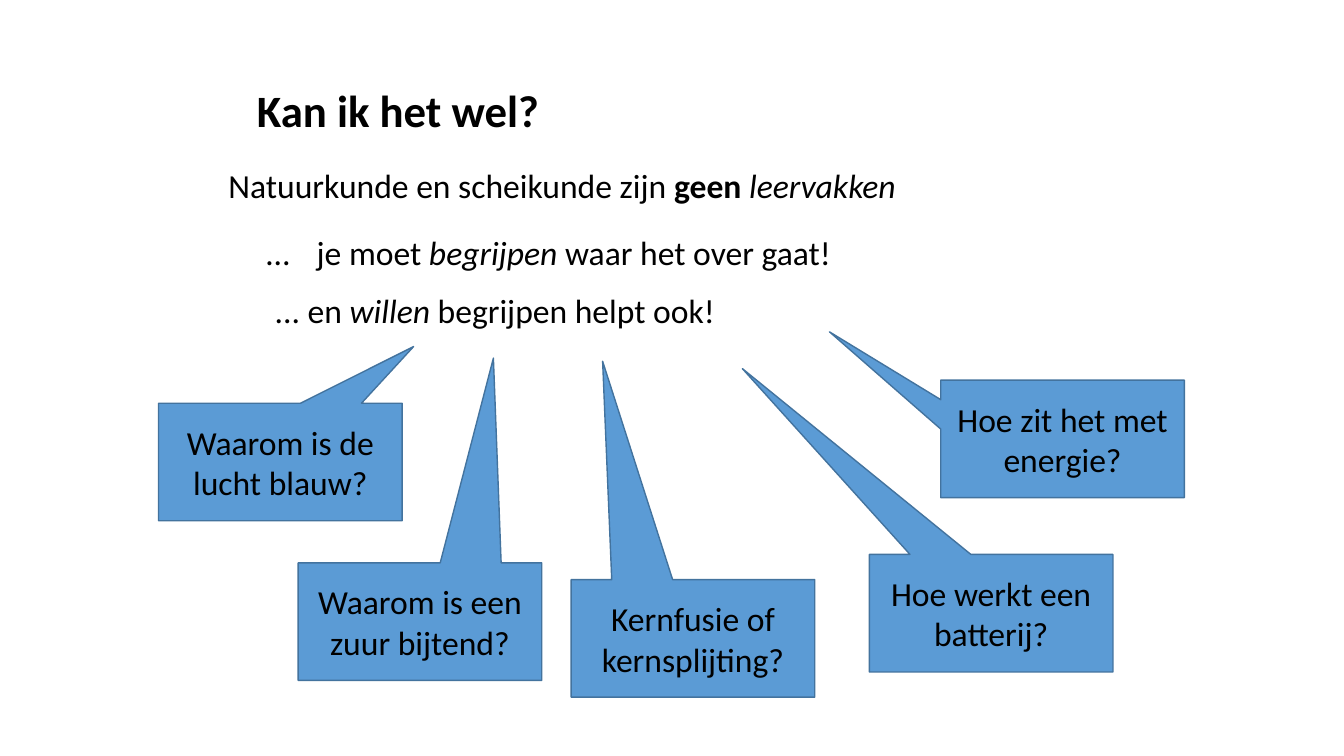
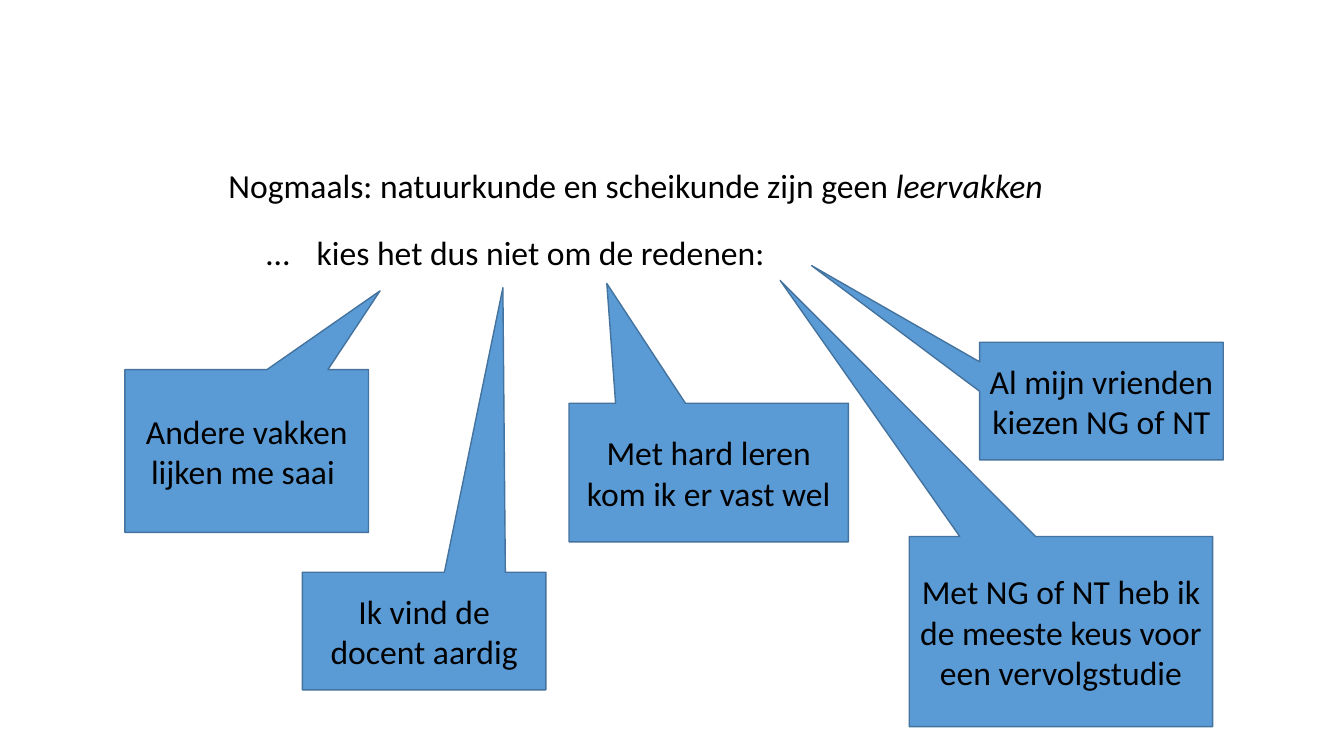
from dataclasses import dataclass

from lxml import etree
from pptx import Presentation
from pptx import util as u
from pptx.dml.color import RGBColor
from pptx.enum import shapes, text
from pptx.oxml.ns import qn

PX = 9525


@dataclass(frozen=True)
class Theme:
    """Colours, type and shared boxes of the slides."""
    font: str = "Calibri"
    ink: RGBColor = RGBColor(0x00, 0x00, 0x00)
    paper: RGBColor = RGBColor(0xFF, 0xFF, 0xFF)
    fill: RGBColor = RGBColor(0x5B, 0x9B, 0xD5)
    edge: RGBColor = RGBColor(0x43, 0x73, 0x9E)
    title_size: int = 32
    text_size: int = 24
    slide_size: tuple = (1280, 720)
    title_box: tuple = (235, 38, 956, 139)
    body_box: tuple = (208, 152, 864, 192)
    callout_size: tuple = (232, 112)


THEME = Theme()


def px(length):
    """Turn px into EMU."""
    return u.Emu(int(length * PX))


def place(shape, box):
    """Move a shape to a box given in px."""
    shape.left, shape.top, shape.width, shape.height = map(px, box)


def write(paragraph, runs, size=THEME.text_size, bold=False,
          align=text.PP_ALIGN.LEFT, before=0, spacing=1.0):
    """Fill a paragraph with (words, style) runs, where style is "", "b" or "i"."""
    paragraph.alignment = align
    paragraph.space_before = u.Pt(before)
    paragraph.line_spacing = spacing
    for words, style in runs:
        run = paragraph.add_run()
        run.text = words
        font = run.font
        font.name, font.size = THEME.font, u.Pt(size)
        font.bold = bold or style == "b"
        font.italic = style == "i"
        font.color.rgb = THEME.ink


def set_frame(frame, anchor):
    """Wrap the text of a frame at a fixed size and anchor it."""
    frame.word_wrap = True
    frame.auto_size = text.MSO_AUTO_SIZE.NONE
    frame.vertical_anchor = anchor


def add_heading(title, heading, box):
    """Place the title, or remove its placeholder when there is none."""
    if not heading:
        title.element.getparent().remove(title.element)
        return
    place(title, box)
    set_frame(title.text_frame, text.MSO_ANCHOR.MIDDLE)
    write(title.text_frame.paragraphs[0], [(heading, "")],
          size=THEME.title_size, bold=True, spacing=0.9)


def add_statements(body, statements, box):
    """Fill the body with (runs, left margin in px, space before in pt) lines."""
    place(body, box)
    frame = body.text_frame
    set_frame(frame, text.MSO_ANCHOR.TOP)
    for number, (runs, margin, before) in enumerate(statements):
        line = frame.add_paragraph() if number else frame.paragraphs[0]
        properties = line._p.get_or_add_pPr()
        properties.set("marL", str(px(margin)))
        properties.set("indent", str(px(-36)))
        etree.SubElement(properties, qn("a:buNone"))
        write(line, runs, before=before)


def add_callout(slide, words, box, tip):
    """Draw a callout in a box, with its pointer ending at the tip."""
    left, top, width, height = box
    callout = slide.shapes.add_shape(
        shapes.MSO_SHAPE.RECTANGULAR_CALLOUT, *map(px, box))
    callout.adjustments[0] = (tip[0] - left) / width - 0.5
    callout.adjustments[1] = (tip[1] - top) / height - 0.5
    callout.shadow.inherit = False
    callout.fill.solid()
    callout.fill.fore_color.rgb = THEME.fill
    callout.line.color.rgb = THEME.edge
    callout.line.width = u.Pt(1)
    set_frame(callout.text_frame, text.MSO_ANCHOR.MIDDLE)
    write(callout.text_frame.paragraphs[0], [(words, "")],
          align=text.PP_ALIGN.CENTER)


def add_question_slide(deck, heading, statements, callouts):
    """Build a slide of statements with callouts pointing at them."""
    slide = deck.slides.add_slide(deck.slide_layouts[1])
    slide.background.fill.solid()
    slide.background.fill.fore_color.rgb = THEME.paper
    add_statements(slide.placeholders[1], statements, THEME.body_box)
    add_heading(slide.shapes.title, heading, THEME.title_box)
    for words, corner, size, tip in callouts:
        add_callout(slide, words, corner + size, tip)


def main():
    """Build and save the deck."""
    deck = Presentation()
    deck.slide_width, deck.slide_height = map(px, THEME.slide_size)
    regular = THEME.callout_size

    add_question_slide(
        deck, "Kan ik het wel?",
        [
            ([("Natuurkunde en scheikunde zijn ", ""), ("geen ", "b"),
              ("leervakken", "i")], 36, 0),
            ([("\t…\tje moet ", ""), ("begrijpen", "i"),
              (" waar het over gaat!", "")], 36, 19),
            ([("\t... en ", ""), ("willen ", "i"),
              ("begrijpen helpt ook!", "")], 44, 13),
        ],
        [
            ("Waarom is de lucht blauw?", (151, 384), regular, (394, 330)),
            ("Waarom is een zuur bijtend?", (284, 536), regular, (470, 341)),
            ("Hoe werkt een batterij?", (828, 528), regular, (707, 351)),
            ("Kernfusie of kernsplijting?", (544, 552), regular, (574, 344)),
            ("Hoe zit het met energie?", (896, 362), regular, (790, 316)),
        ])

    add_question_slide(
        deck, None,
        [
            ([("Nogmaals: natuurkunde en scheikunde zijn geen ", ""),
              ("leervakken", "i")], 36, 0),
            ([("\t…\tkies het dus niet om de redenen:", "")], 36, 19),
        ],
        [
            ("Andere vakken lijken me saai ", (119, 352), (232, 155), (362, 277)),
            ("Ik vind de docent aardig", (288, 545), regular, (479, 274)),
            ("Met NG of NT heb ik de meeste keus voor een vervolgstudie",
             (866, 511), (289, 181), (743, 267)),
            ("Met hard leren kom ik er vast wel", (542, 384), (266, 132), (578, 270)),
            ("Al mijn vrienden kiezen NG of NT", (933, 326), regular, (773, 253)),
        ])

    deck.save("out.pptx")


if __name__ == "__main__":
    main()
